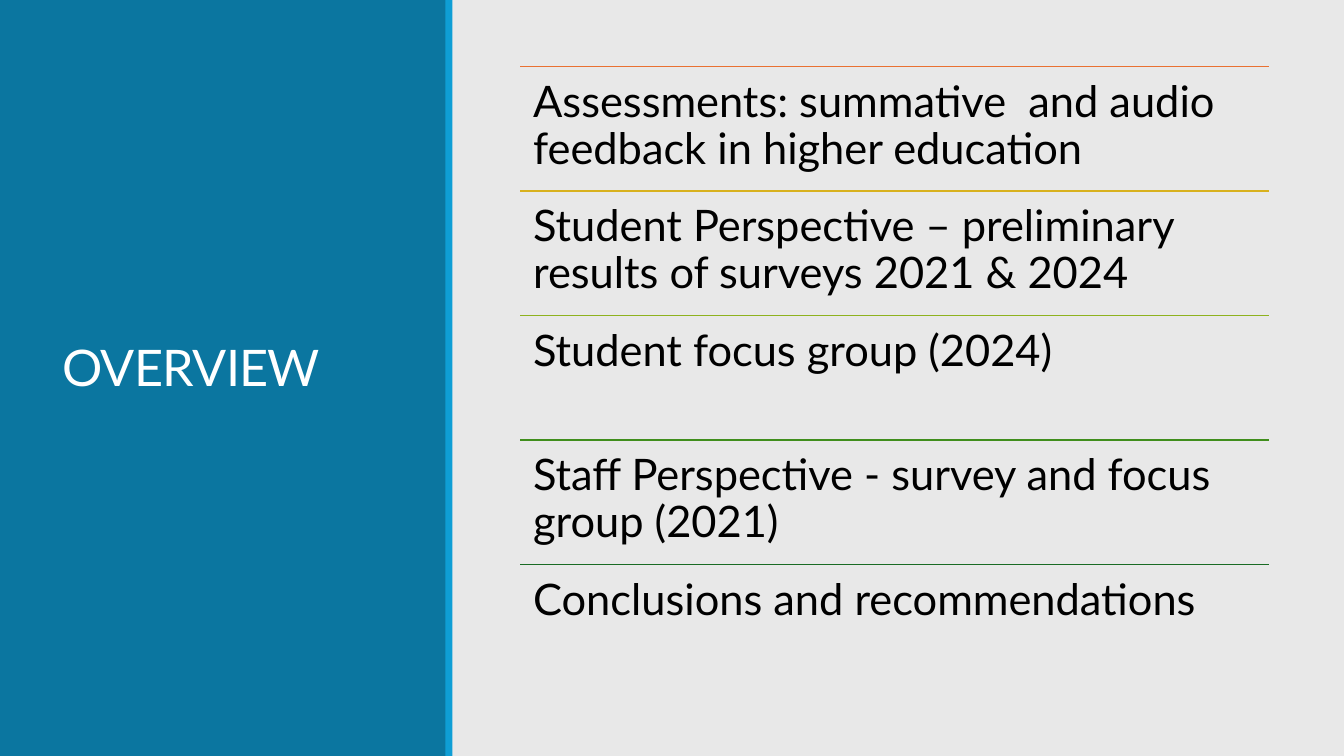
from lxml import etree
from pptx import Presentation
from pptx.dml.color import RGBColor
from pptx.enum.shapes import MSO_CONNECTOR, MSO_SHAPE
from pptx.enum.text import MSO_ANCHOR
from pptx.oxml.ns import qn
from pptx.util import Pt

RECTANGLE = MSO_SHAPE.RECTANGLE
STRAIGHT = MSO_CONNECTOR.STRAIGHT
TOP, MIDDLE = MSO_ANCHOR.TOP, MSO_ANCHOR.MIDDLE

PX = 4572  # EMU per px, 200 px to the inch
PAGE_WIDTH, PAGE_HEIGHT = 2667, 1500


def color(value):
    return RGBColor.from_string(value)


def write(box, text, font="Lato", size=31, fill="000000", line_spacing=0.9,
          tracking=0, anchor=TOP, margin=26):
    frame = box.text_frame
    frame.word_wrap = True
    frame.vertical_anchor = anchor
    frame.margin_left = frame.margin_right = margin * PX
    frame.margin_top = frame.margin_bottom = margin * PX
    para = frame.paragraphs[0]
    para.line_spacing = line_spacing
    span = para.add_run()
    span.text = text
    span.font.name = font
    span.font.size = Pt(size)
    span.font.color.rgb = color(fill)
    if tracking:
        span.font._element.set("spc", str(round(tracking * 100)))


class Page:
    """Draws the elements of one slide, with lengths in px."""

    def __init__(self, deck, background):
        self.slide = deck.slides.add_slide(deck.slide_layouts[6])
        self.shapes = self.slide.shapes
        self.slide.background.fill.solid()
        self.slide.background.fill.fore_color.rgb = color(background)

    def panel(self, left, top, width, height, fill):
        box = self.shapes.add_shape(
            RECTANGLE, left * PX, top * PX, width * PX, height * PX)
        box.shadow.inherit = False
        box.fill.solid()
        box.fill.fore_color.rgb = color(fill)
        box.line.fill.background()

    def rule(self, left, top, width, stroke, weight=1.25):
        line = self.shapes.add_connector(
            STRAIGHT, left * PX, top * PX, (left + width) * PX, top * PX)
        line.line.color.rgb = color(stroke)
        line.line.width = Pt(weight)
        etree.SubElement(line._element.spPr, qn("a:effectLst"))

    def text(self, left, top, width, height, text, **style):
        box = self.shapes.add_textbox(
            left * PX, top * PX, width * PX, height * PX)
        write(box, text, **style)


TOPICS = [
    ("E97132", "Assessments: summative  and audio feedback in higher education"),
    ("D8B11D", "Student Perspective – preliminary results of surveys 2021 & 2024"),
    ("8EB21E", "Student focus group (2024)"),
    ("408E1C", "Staff Perspective - survey and focus group (2021)"),
    ("196B24", "Conclusions and recommendations"),
]
LIST_LEFT, LIST_TOP, LIST_WIDTH, ROW_HEIGHT = 1032, 132, 1487, 247


def main():
    deck = Presentation()
    deck.slide_width = PAGE_WIDTH * PX
    deck.slide_height = PAGE_HEIGHT * PX
    page = Page(deck, "E8E8E8")

    # Side panel with the title
    page.panel(0, 0, 886, PAGE_HEIGHT, "0B76A0")
    page.text(104, 106, 674, 1262, "OVERVIEW", size=36, fill="FFFFFF",
              line_spacing=0.85, tracking=-0.5, anchor=MIDDLE, margin=20)
    page.panel(884, 0, 14, PAGE_HEIGHT, "0F9ED5")

    # Topics, each under its own rule
    for row, (stroke, topic) in enumerate(TOPICS):
        top = LIST_TOP + row * ROW_HEIGHT
        page.rule(LIST_LEFT, top, LIST_WIDTH, stroke)
        page.text(LIST_LEFT, top, LIST_WIDTH, ROW_HEIGHT, topic)

    deck.save("out.pptx")


if __name__ == "__main__":
    main()
